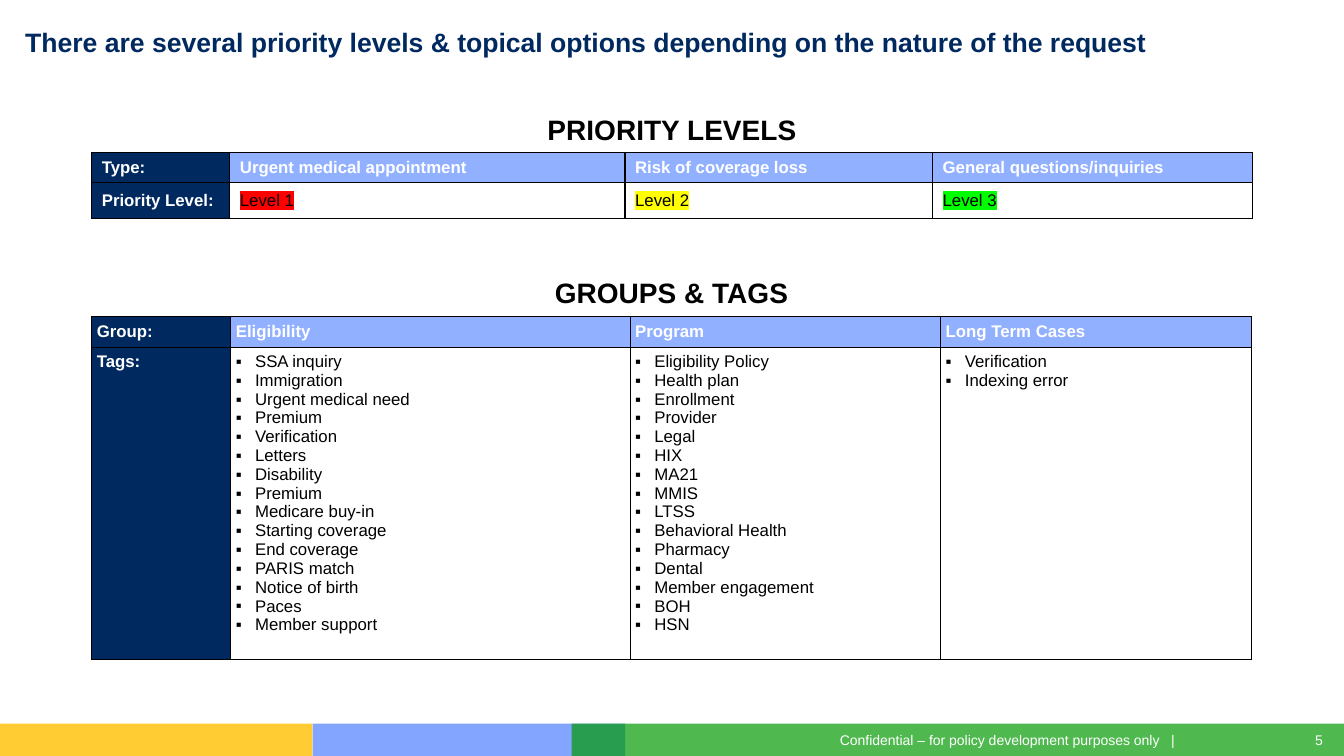
from lxml import etree
from pptx import Presentation
from pptx.dml.color import RGBColor
from pptx.enum.shapes import MSO_SHAPE
from pptx.enum.text import MSO_ANCHOR, PP_ALIGN
from pptx.oxml.ns import qn
from pptx.util import Inches, Pt

RECTANGLE = MSO_SHAPE.RECTANGLE
TOP, MIDDLE = MSO_ANCHOR.TOP, MSO_ANCHOR.MIDDLE
LEFT, CENTER, RIGHT = PP_ALIGN.LEFT, PP_ALIGN.CENTER, PP_ALIGN.RIGHT

NAVY = RGBColor(0x00, 0x29, 0x60)
PERIWINKLE = RGBColor(0x91, 0xB0, 0xFF)
BLUE = RGBColor(0x5E, 0x8B, 0xFF)
GOLD = RGBColor(0xFF, 0xC0, 0x00)
GREEN = RGBColor(0x00, 0x99, 0x00)
RED = RGBColor(0xFF, 0x00, 0x00)
YELLOW = RGBColor(0xFF, 0xFF, 0x00)
LIME = RGBColor(0x00, 0xFF, 0x00)
BLACK = RGBColor(0x00, 0x00, 0x00)
WHITE = RGBColor(0xFF, 0xFF, 0xFF)

SLIDE_WIDTH, SLIDE_HEIGHT = 13.33, 7.5
TABLE_LEFT = 0.91
HEADING_HEIGHT, LABEL_HEIGHT = 0.41, 0.29

LEVELS = [("Urgent medical appointment", "Level 1", RED),
          ("Risk of coverage loss", "Level 2", YELLOW),
          ("General questions/inquiries", "Level 3", LIME)]
GROUPS = {
    "Eligibility": ["SSA inquiry", "Immigration", "Urgent medical need", "Premium",
                    "Verification", "Letters", "Disability", "Premium",
                    "Medicare buy-in", "Starting coverage", "End coverage",
                    "PARIS match", "Notice of birth", "Paces", "Member support"],
    "Program": ["Eligibility Policy", "Health plan", "Enrollment", "Provider", "Legal",
                "HIX", "MA21", "MMIS", "LTSS", "Behavioral Health", "Pharmacy",
                "Dental", "Member engagement", "BOH", "HSN"],
    "Long Term Cases": ["Verification", "Indexing error"],
}


def style_paragraph(paragraph, size, color, bold=False, align=LEFT):
    paragraph.alignment = align
    font = paragraph.font
    font.name, font.size, font.bold = "Arial", Pt(size), bold
    font.color.rgb = color


def add_text(slide, box, text, size, color, bold=False, align=LEFT, anchor=TOP, wrap=True):
    frame = slide.shapes.add_textbox(*map(Inches, box)).text_frame
    frame.margin_left = frame.margin_right = frame.margin_top = frame.margin_bottom = 0
    frame.word_wrap, frame.vertical_anchor = wrap, anchor
    frame.text = text
    style_paragraph(frame.paragraphs[0], size, color, bold, align)


def set_borders(cell, visible):
    """Draw the named sides in black and hide the others."""
    properties = cell._tc.get_or_add_tcPr()
    for index, side in enumerate("LRTB"):
        line = etree.Element(qn(f"a:ln{side}"), w=str(Pt(1)))
        if side in visible:
            fill = etree.SubElement(line, qn("a:solidFill"))
            etree.SubElement(fill, qn("a:srgbClr"), val=str(BLACK))
        else:
            etree.SubElement(line, qn("a:noFill"))
        properties.insert(index, line)


def fill_cell(cell, lines, color=BLACK, fill=None, bold=False, size=12, align=LEFT,
              borders="LRTB", bullet=False):
    if fill is None:
        cell.fill.background()
    else:
        cell.fill.solid()
        cell.fill.fore_color.rgb = fill
    set_borders(cell, borders)
    cell.text = "\n".join(lines)
    for paragraph in cell.text_frame.paragraphs:
        if bullet:
            properties = paragraph._p.get_or_add_pPr()
            properties.set("marL", str(Inches(0.19)))
            properties.set("indent", str(-Inches(0.19)))
            etree.SubElement(properties, qn("a:buFont"), typeface="Arial")
            etree.SubElement(properties, qn("a:buChar"), char="▪")
        style_paragraph(paragraph, size, color, bold, align)


def highlight(cell, color):
    run_properties = cell.text_frame.paragraphs[0].runs[0]._r.get_or_add_rPr()
    mark = etree.SubElement(run_properties, qn("a:highlight"))
    etree.SubElement(mark, qn("a:srgbClr"), val=str(color))


def add_headed_table(slide, top, columns, body_height, heading, labels, names, margin, anchor):
    """Add a table with a spanning heading, a label column and a row of names."""
    heights = [HEADING_HEIGHT, LABEL_HEIGHT, body_height]
    box = (TABLE_LEFT, top, sum(columns), sum(heights))
    table = slide.shapes.add_table(3, len(columns), *map(Inches, box)).table
    table.first_row = table.horz_banding = False
    for column, width in zip(table.columns, columns):
        column.width = Inches(width)
    for row, height in zip(table.rows, heights):
        row.height = Inches(height)
    for cell in table.iter_cells():
        cell.margin_left = cell.margin_right = Inches(margin)
        cell.margin_top = cell.margin_bottom = Inches(0.05)
        cell.vertical_anchor = anchor

    table.cell(0, 0).merge(table.cell(0, len(columns) - 1))
    for index in range(len(columns)):
        fill_cell(table.cell(0, index), [heading] if index == 0 else [], fill=WHITE,
                  bold=True, size=20, align=CENTER, borders="B")
    for row, label in enumerate(labels, 1):
        fill_cell(table.cell(row, 0), [label], WHITE, NAVY, bold=True)
    for column, name in enumerate(names, 1):
        fill_cell(table.cell(1, column), [name], WHITE, PERIWINKLE, bold=True)
    return table


def add_priority_levels(slide, top):
    table = add_headed_table(slide, top, [1.37, 3.92, 3.05, 3.17], 0.35, "PRIORITY LEVELS",
                             ["Type:", "Priority Level:"], [level[0] for level in LEVELS],
                             0.1, MIDDLE)
    for column, (_, level, color) in enumerate(LEVELS, 1):
        cell = table.cell(2, column)
        fill_cell(cell, [level])
        highlight(cell, color)


def add_groups_and_tags(slide, top):
    table = add_headed_table(slide, top, [1.38, 3.96, 3.08, 3.08], 2.89, "GROUPS & TAGS",
                             ["Group:", "Tags:"], GROUPS, 0.05, TOP)
    for column, tags in enumerate(GROUPS.values(), 1):
        fill_cell(table.cell(2, column), tags, bullet=True)


def add_footer(slide, top):
    height = SLIDE_HEIGHT - top
    bands = [(3.1, 3.1, BLUE, 77), (0, 3.1, GOLD, 80),
             (5.67, SLIDE_WIDTH - 5.67, GREEN, 69)]
    for left, width, color, opacity in bands:
        band = slide.shapes.add_shape(RECTANGLE, *map(Inches, (left, top, width, height)))
        band.shadow.inherit = False
        band.line.fill.background()
        band.fill.solid()
        band.fill.fore_color.rgb = color
        color_element = band._element.spPr.find(f"{qn('a:solidFill')}/{qn('a:srgbClr')}")
        etree.SubElement(color_element, qn("a:alpha"), val=str(opacity * 1000))
    text_top = top + 0.08
    add_text(slide, (12.95, text_top, 0.17, 0.17), "5", 10, WHITE,
             align=RIGHT, anchor=MIDDLE, wrap=False)
    # The three gaps before the bar set it apart from the notice.
    add_text(slide, (8.33, text_top, 4.54, 0.17),
             "Confidential – for policy development purposes only\u00a0\u00a0 |", 10, WHITE)


def main():
    presentation = Presentation()
    presentation.slide_width = Inches(SLIDE_WIDTH)
    presentation.slide_height = Inches(SLIDE_HEIGHT)
    slide = presentation.slides.add_slide(presentation.slide_layouts[6])
    add_footer(slide, 7.18)
    add_text(slide, (0.25, 0.26, 12.78, 0.32),
             "There are several priority levels & topical options depending on the nature "
             "of the request", 19, NAVY, bold=True, anchor=MIDDLE)
    add_priority_levels(slide, 1.08)
    add_groups_and_tags(slide, 2.71)
    presentation.save("out.pptx")


if __name__ == "__main__":
    main()
